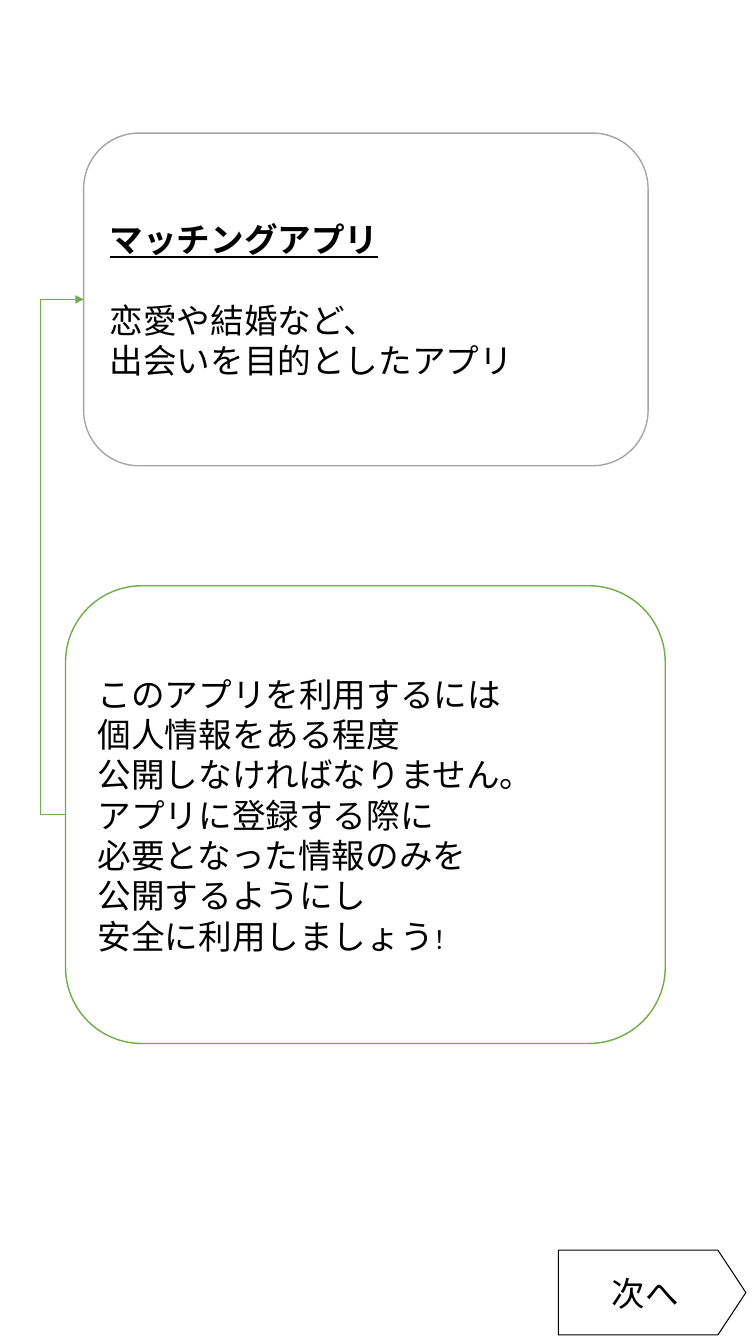
from lxml import etree
from pptx import Presentation
from pptx.dml.color import RGBColor
from pptx.enum.shapes import MSO_CONNECTOR, MSO_SHAPE
from pptx.enum.text import MSO_ANCHOR, PP_ALIGN
from pptx.oxml.ns import qn
from pptx.util import Inches, Pt

BLACK = RGBColor(0x00, 0x00, 0x00)
WHITE = RGBColor(0xFF, 0xFF, 0xFF)
GRAY = RGBColor(0xA5, 0xA5, 0xA5)
GREEN = RGBColor(0x70, 0xAD, 0x47)

BODY = {"name": "Calibri", "size": Pt(24), "bold": False}
HEADING = {**BODY, "bold": True, "underline": True}
SMALL = {**BODY, "size": Pt(18)}
BUTTON = {**BODY, "name": "Noto Sans CJK JP"}

LEFT_TEXT = {"alignment": PP_ALIGN.LEFT}
AFTER_HEADING = {**LEFT_TEXT, "space_before": Pt(29)}
CENTERED = {"alignment": PP_ALIGN.CENTER}

TERM = [
    (LEFT_TEXT, [("マッチングアプリ", HEADING)]),
    (AFTER_HEADING, [("恋愛や結婚など、", BODY)]),
    (LEFT_TEXT, [("出会いを目的としたアプリ", BODY)]),
]
ADVICE_LINES = [
    "このアプリを利用するには",
    "個人情報をある程度",
    "公開しなければなりません。",
    "アプリに登録する際に",
    "必要となった情報のみを",
    "公開するようにし",
]
ADVICE = [(LEFT_TEXT, [(line, BODY)]) for line in ADVICE_LINES]
ADVICE.append((LEFT_TEXT, [("安全に利用しましょう", BODY), ("！", SMALL)]))
NEXT = [(CENTERED, [("次へ", BUTTON)])]

TERM_BOX = (0.83, 1.32, 5.6, 3.3)
ADVICE_BOX = (0.65, 5.81, 5.95, 4.54)
NEXT_BOX = (5.54, 12.4, 1.86, 0.84)
LINK_X = 0.4


def set_all(target, values):
    for name, value in values.items():
        setattr(target, name, value)


def add_panel(slide, preset, box, paragraphs, line_color, line_width):
    panel = slide.shapes.add_shape(preset, *map(Inches, box))
    panel.shadow.inherit = False
    panel.fill.solid()
    panel.fill.fore_color.rgb = WHITE
    panel.line.color.rgb = line_color
    panel.line.width = Pt(line_width)
    frame = panel.text_frame
    set_all(frame, {"word_wrap": True, "vertical_anchor": MSO_ANCHOR.MIDDLE})
    for index, (layout, runs) in enumerate(paragraphs):
        paragraph = frame.add_paragraph() if index else frame.paragraphs[0]
        set_all(paragraph, layout)
        for text, style in runs:
            run = paragraph.add_run()
            run.text = text
            set_all(run.font, style)
            run.font.color.rgb = BLACK
    return panel


def add_link(slide, source, target):
    link = slide.shapes.add_connector(MSO_CONNECTOR.ELBOW, 0, 0, 0, 0)
    link.begin_connect(source, 1)
    link.end_connect(target, 1)
    link.line.color.rgb = GREEN
    link.line.width = Pt(0.5)
    bend = (Inches(LINK_X) - link.begin_x) / (link.end_x - link.begin_x)
    properties = link._element.spPr
    guides = properties.find(qn("a:prstGeom")).get_or_add_avLst()
    etree.SubElement(guides, qn("a:gd"), name="adj1", fmla=f"val {round(bend * 100000)}")
    etree.SubElement(properties.find(qn("a:ln")), qn("a:tailEnd"), type="triangle")
    etree.SubElement(properties, qn("a:effectLst"))


def main():
    deck = Presentation()
    set_all(deck, {"slide_width": Inches(7.5), "slide_height": Inches(13.33)})
    slide = deck.slides.add_slide(deck.slide_layouts[6])
    term = add_panel(slide, MSO_SHAPE.ROUNDED_RECTANGLE, TERM_BOX, TERM, GRAY, 1)
    advice = add_panel(slide, MSO_SHAPE.ROUNDED_RECTANGLE, ADVICE_BOX, ADVICE, GREEN, 1)
    add_link(slide, advice, term)
    next_button = add_panel(slide, MSO_SHAPE.PENTAGON, NEXT_BOX, NEXT, BLACK, 0.75)
    next_button.adjustments[0] = 0.33
    deck.save("out.pptx")


if __name__ == "__main__":
    main()
